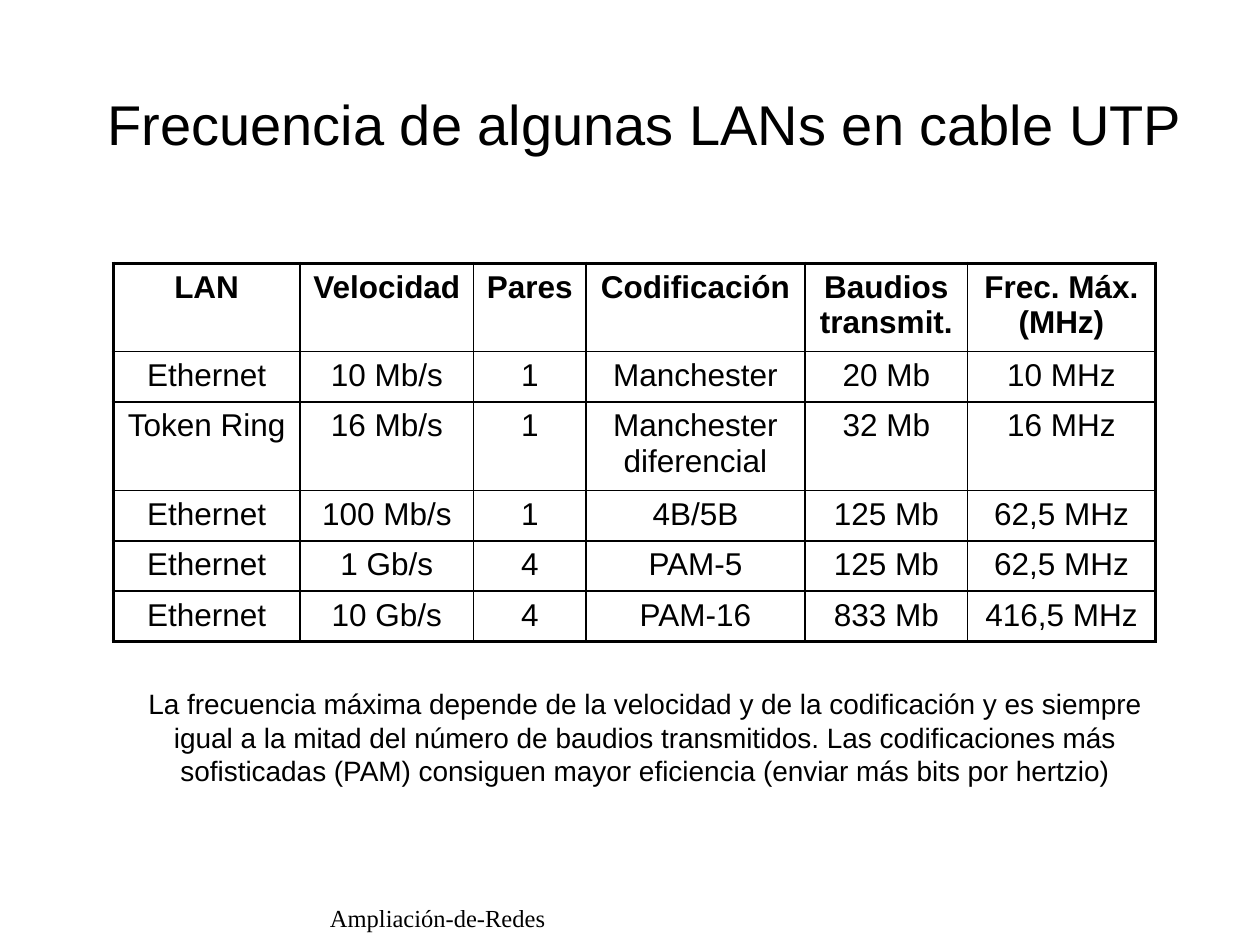
from lxml import etree
from pptx import Presentation
from pptx.dml.color import RGBColor
from pptx.enum.text import MSO_ANCHOR, MSO_AUTO_SIZE, PP_ALIGN
from pptx.oxml.ns import qn
from pptx.util import Inches, Pt

CENTER, LEFT = PP_ALIGN.CENTER, PP_ALIGN.LEFT
MIDDLE = MSO_ANCHOR.MIDDLE
NO_AUTOFIT = MSO_AUTO_SIZE.NONE
TITLE_ONLY = 5

BLACK = RGBColor(0, 0, 0)
WHITE = RGBColor(255, 255, 255)
OUTER_LINE, INNER_LINE = Pt(2.25), Pt(1)

COLUMN_WIDTHS = [1.48, 1.38, 0.89, 1.74, 1.29, 1.49]
ONE_LINE, TWO_LINES = 0.4, 0.7
ROW_HEIGHTS = [TWO_LINES, ONE_LINE, TWO_LINES, ONE_LINE, ONE_LINE, ONE_LINE]
LAN_ROWS = [
    ["LAN", "Velocidad", "Pares", "Codificación", "Baudios transmit.", "Frec. Máx. (MHz)"],
    ["Ethernet", "10 Mb/s", "1", "Manchester", "20 Mb", "10 MHz"],
    ["Token Ring", "16 Mb/s", "1", "Manchester diferencial", "32 Mb", "16 MHz"],
    ["Ethernet", "100 Mb/s", "1", "4B/5B", "125 Mb", "62,5 MHz"],
    ["Ethernet", "1 Gb/s", "4", "PAM-5", "125 Mb", "62,5 MHz"],
    ["Ethernet", "10 Gb/s", "4", "PAM-16", "833 Mb", "416,5 MHz"],
]
EXPLANATION = (
    "La frecuencia máxima depende de la velocidad y de la codificación y es siempre "
    "igual a la mitad del número de baudios transmitidos. Las codificaciones más "
    "sofisticadas (PAM) consiguen mayor eficiencia (enviar más bits por hertzio)"
)


def write_text(text_frame, text, size, font_name="Arial", bold=False, alignment=CENTER):
    text_frame.text = text
    paragraph = text_frame.paragraphs[0]
    paragraph.alignment = alignment
    font = paragraph.runs[0].font
    font.name, font.size, font.bold = font_name, Pt(size), bold
    font.color.rgb = BLACK
    return paragraph


def set_space_before(paragraph, percent):
    properties = paragraph._p.get_or_add_pPr()
    spacing = etree.SubElement(properties, qn("a:spcBef"))
    etree.SubElement(spacing, qn("a:spcPct"), val=str(percent * 1000))


def set_borders(cell, widths):
    """Draw the borders of a cell; widths are left, right, top, bottom."""
    properties = cell._tc.get_or_add_tcPr()
    for tag, width in zip(("a:lnL", "a:lnR", "a:lnT", "a:lnB"), widths):
        line = etree.SubElement(properties, qn(tag), w=str(width))
        fill = etree.SubElement(line, qn("a:solidFill"))
        etree.SubElement(fill, qn("a:srgbClr"), val=str(BLACK))


def add_title(slide, left, top, width, height):
    title = slide.shapes.title
    title.left, title.top, title.width, title.height = left, top, width, height
    text_frame = title.text_frame
    write_text(text_frame, "Frecuencia de algunas LANs en cable UTP", 32)
    text_frame.auto_size = NO_AUTOFIT
    text_frame.vertical_anchor = MIDDLE


def add_lan_table(slide, left, top, width, height):
    last_row, last_column = len(LAN_ROWS) - 1, len(COLUMN_WIDTHS) - 1
    table = slide.shapes.add_table(
        last_row + 1, last_column + 1, left, top, width, height).table
    table.first_row = table.horz_banding = False
    for column, column_width in zip(table.columns, COLUMN_WIDTHS):
        column.width = Inches(column_width)
    for row, row_height in zip(table.rows, ROW_HEIGHTS):
        row.height = Inches(row_height)

    # Cells: bold header row, thick outer frame, thin inner grid
    for row_index, values in enumerate(LAN_ROWS):
        for column_index, value in enumerate(values):
            cell = table.cell(row_index, column_index)
            paragraph = write_text(cell.text_frame, value, 18, bold=row_index == 0)
            set_space_before(paragraph, 20)
            on_edge = (column_index == 0, column_index == last_column,
                       row_index == 0, row_index == last_row)
            set_borders(cell, [OUTER_LINE if edge else INNER_LINE for edge in on_edge])
            cell.fill.solid()
            cell.fill.fore_color.rgb = WHITE


def add_explanation(slide, left, top, width, height):
    text_frame = slide.shapes.add_textbox(left, top, width, height).text_frame
    text_frame.word_wrap = True
    write_text(text_frame, EXPLANATION, 16)


def add_footer(slide, left, top, width, height):
    text_frame = slide.shapes.add_textbox(left, top, width, height).text_frame
    text_frame.word_wrap = False
    write_text(text_frame, "Ampliación-de-Redes", 14, "Times New Roman", alignment=LEFT)


def main():
    presentation = Presentation()
    presentation.slide_width, presentation.slide_height = Inches(10), Inches(7.5)
    slide = presentation.slides.add_slide(presentation.slide_layouts[TITLE_ONLY])
    add_footer(slide, Inches(2.52), Inches(7.12), Inches(1.93), Inches(0.34))
    add_title(slide, Inches(0.67), Inches(0.52), Inches(8.9), Inches(0.92))
    add_lan_table(slide, Inches(0.9), Inches(2.09), Inches(8.27), Inches(3))
    add_explanation(slide, Inches(0.83), Inches(5.4), Inches(8.58), Inches(0.9))
    presentation.save("out.pptx")


if __name__ == "__main__":
    main()
